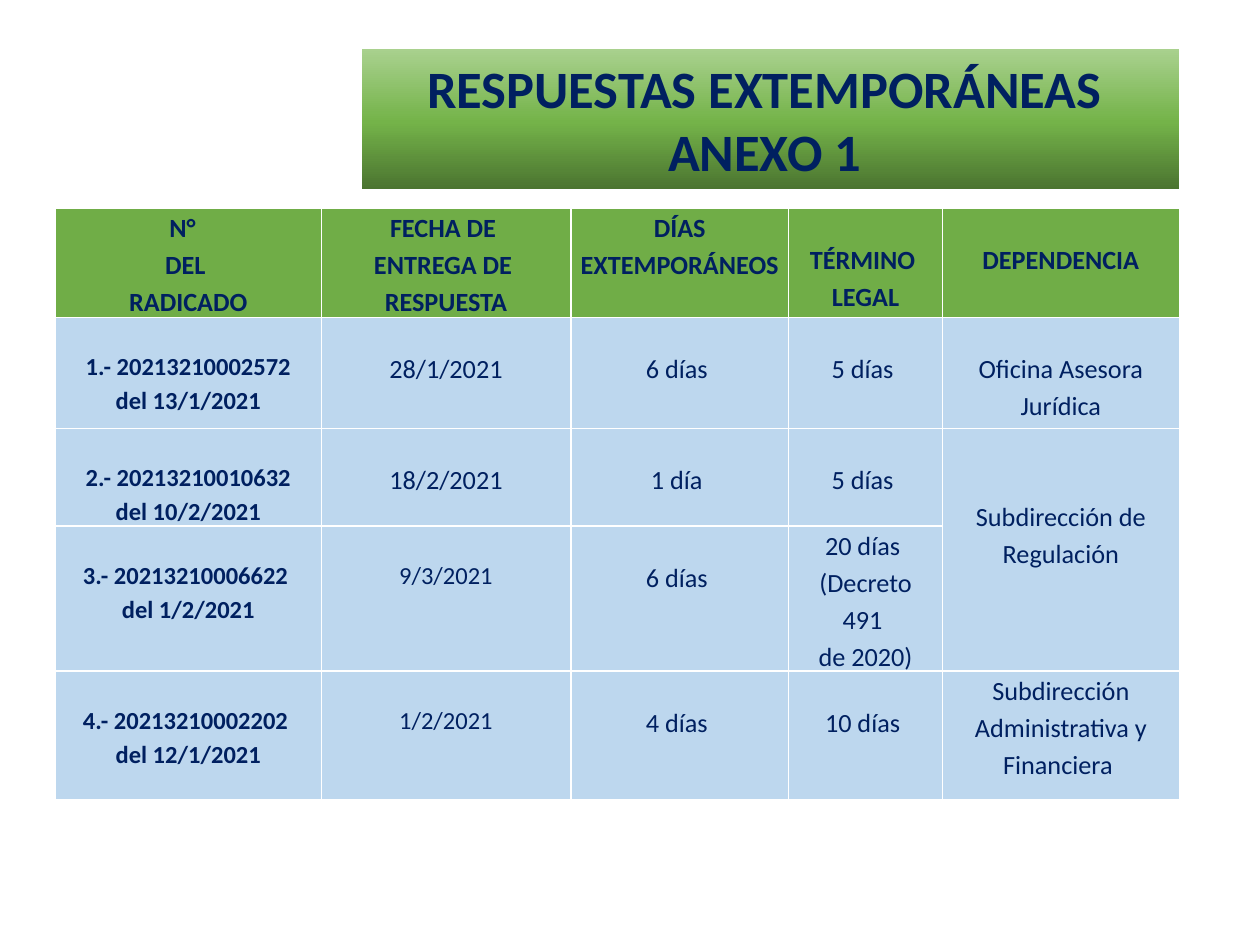
import copy

import pptx
import pptx.dml.color
import pptx.enum.shapes
import pptx.enum.text
import pptx.oxml
import pptx.oxml.ns
import pptx.util
from pptx.util import Inches

COLORS = {
    "navy": "002060",
    "green": "70AD47",
    "blue": "BDD7EE",
    "white": "FFFFFF",
}
TITLE_GRADIENT = [(0, "4B7430"), (0.48, "74B349"), (1, "A9D18E")]
FONT = "Calibri"
COLUMN_WIDTHS = [2.11, 1.98, 1.73, 1.22, 1.88]
ROW_HEIGHTS = [0.87, 0.88, 0.77, 1.15, 1.02]
TOP_MARGINS = [
    [0, 0, 0, 0.25, 0.25],
    [0.24, 0.25, 0.25, 0.25, 0.25],
    [0.24, 0.25, 0.25, 0.25, 0.54],
    [0.24, 0.24, 0.25, 0, 0],
    [0.24, 0.24, 0.25, 0.25, 0],
]
SMALL_DATES = ["9/3/2021", "1/2/2021"]
ROWS = [
    ["N°  \nDEL \nRADICADO", "FECHA DE \nENTREGA DE \nRESPUESTA",
     "DÍAS EXTEMPORÁNEOS", "TÉRMINO \nLEGAL", "DEPENDENCIA"],
    ["1.- 20213210002572\ndel 13/1/2021", "28/1/2021", "6 días ", "5 días ",
     "Oficina Asesora Jurídica"],
    ["2.- 20213210010632\ndel 10/2/2021", "18/2/2021", "1 día ", "5 días ",
     "Subdirección de Regulación"],
    ["3.- 20213210006622 \ndel 1/2/2021", "9/3/2021", "6 días ",
     "20 días \n(Decreto 491 \nde 2020)", ""],
    ["4.- 20213210002202 \ndel 12/1/2021", "1/2/2021", "4 días ", "10 días ",
     "Subdirección Administrativa y Financiera "],
]


def rgb(value):
    return pptx.dml.color.RGBColor.from_string(value)


def style_text(text_frame, size, bold, line_spacing=None):
    for paragraph in text_frame.paragraphs:
        paragraph.alignment = pptx.enum.text.PP_ALIGN.CENTER
        paragraph.line_spacing = line_spacing
        paragraph.font.name = FONT
        paragraph.font.size = pptx.util.Pt(size)
        paragraph.font.bold = bold
        paragraph.font.color.rgb = rgb(COLORS["navy"])


def add_title(slide, left, top, width, height):
    shape = slide.shapes.add_shape(
        pptx.enum.shapes.MSO_SHAPE.RECTANGLE, left, top, width, height)
    shape.shadow.inherit = False
    shape.line.fill.background()
    shape.fill.gradient()
    shape.fill.gradient_angle = 90
    stop_list = shape.element.find(".//" + pptx.oxml.ns.qn("a:gsLst"))
    stop_list.append(copy.deepcopy(stop_list[0]))
    for stop, (position, color) in zip(shape.fill.gradient_stops, TITLE_GRADIENT):
        stop.position = position
        stop.color.rgb = rgb(color)
    text_frame = shape.text_frame
    text_frame.text = "RESPUESTAS EXTEMPORÁNEAS \nANEXO 1 "
    text_frame.word_wrap = True
    text_frame.auto_size = pptx.enum.text.MSO_AUTO_SIZE.SHAPE_TO_FIT_TEXT
    text_frame.vertical_anchor = pptx.enum.text.MSO_ANCHOR.MIDDLE
    style_text(text_frame, 30, True)


def set_borders(cell):
    properties = cell._tc.get_or_add_tcPr()
    for side in "LRTB":
        properties.append(pptx.oxml.parse_xml(
            f'<a:ln{side} {pptx.oxml.ns.nsdecls("a")} w="{pptx.util.Pt(1)}">'
            f'<a:solidFill><a:srgbClr val="{COLORS["white"]}"/></a:solidFill>'
            f'</a:ln{side}>'))


def add_response_table(slide, left, top, width, height):
    table = slide.shapes.add_table(
        len(ROWS), len(COLUMN_WIDTHS), left, top, width, height).table
    for column, column_width in zip(table.columns, COLUMN_WIDTHS):
        column.width = Inches(column_width)
    for row, row_height in zip(table.rows, ROW_HEIGHTS):
        row.height = Inches(row_height)
    table.cell(2, 4).merge(table.cell(3, 4))
    for row_index, texts in enumerate(ROWS):
        is_header = row_index == 0
        for column_index, text in enumerate(texts):
            cell = table.cell(row_index, column_index)
            set_borders(cell)
            cell.fill.solid()
            cell.fill.fore_color.rgb = rgb(COLORS["green" if is_header else "blue"])
            cell.margin_left = cell.margin_right = Inches(0.07)
            cell.margin_top = Inches(TOP_MARGINS[row_index][column_index])
            cell.margin_bottom = 0
            cell.text_frame.text = text
            is_filing = column_index == 0 and not is_header
            size = 14 if is_filing or text in SMALL_DATES else 15
            style_text(cell.text_frame, size, is_header or is_filing, 1.15)


def main():
    presentation = pptx.Presentation()
    presentation.slide_width = Inches(10)
    presentation.slide_height = Inches(7.5)
    slide = presentation.slides.add_slide(presentation.slide_layouts[6])
    add_title(slide, Inches(2.87), Inches(0.39), Inches(6.49), Inches(1.11))
    add_response_table(slide, Inches(0.44), Inches(1.65),
                       Inches(sum(COLUMN_WIDTHS)), Inches(sum(ROW_HEIGHTS)))
    presentation.save("out.pptx")


if __name__ == "__main__":
    main()
